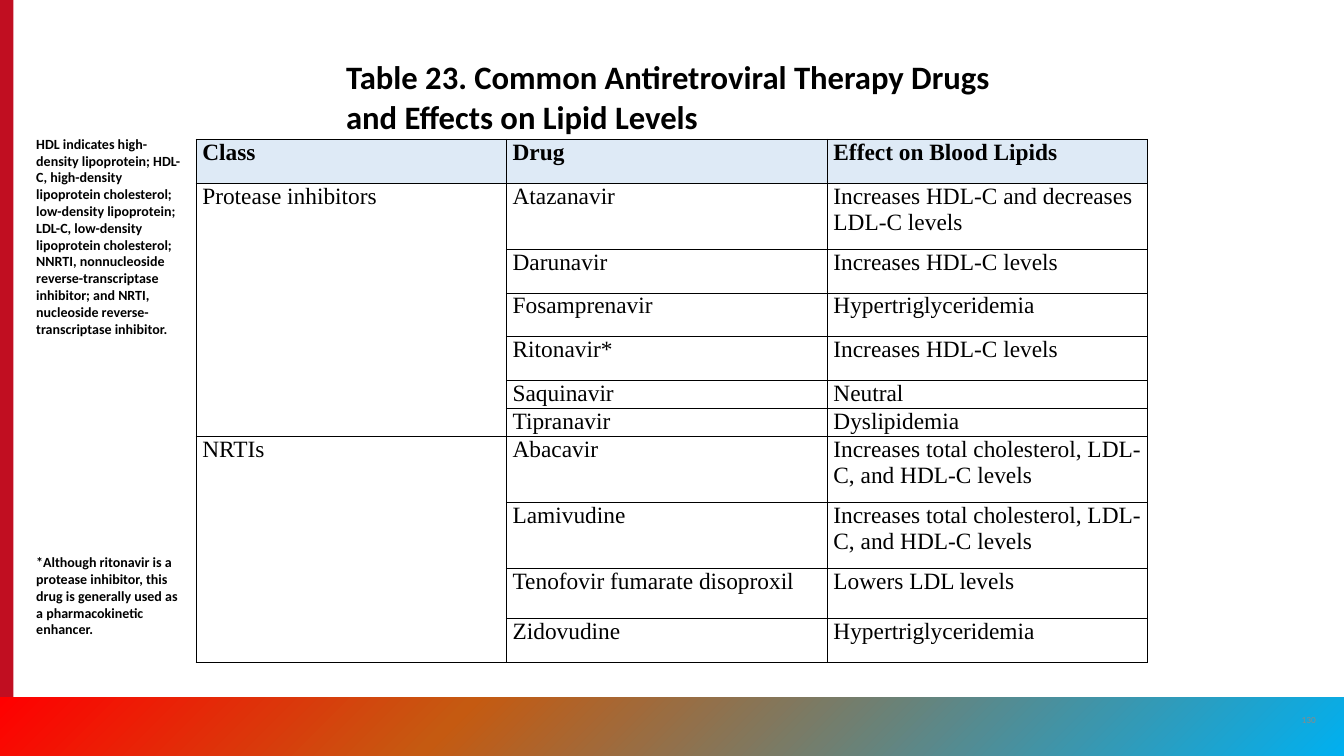
from lxml.etree import SubElement
from pptx import Presentation
from pptx.dml.color import RGBColor
from pptx.enum.shapes import MSO_SHAPE
from pptx.enum.text import MSO_ANCHOR, MSO_AUTO_SIZE, PP_ALIGN
from pptx.oxml import parse_xml
from pptx.oxml.ns import nsdecls, qn
from pptx.util import Pt

COLORS = {"text": "000000", "header": "DEEAF6", "bar": "C10E21", "number": "8A8B8A",
          "blue": "00B0F0", "orange": "C55A11", "red": "FF0000"}
WIDTH, HEIGHT = 1152, 648

TITLE = "Table 23. Common Antiretroviral Therapy Drugs and Effects on Lipid Levels"
ABBREVIATIONS = (
    "HDL indicates high-density lipoprotein; HDL-C, high-density lipoprotein cholesterol; "
    "low-density lipoprotein; LDL-C, low-density lipoprotein cholesterol; NNRTI, nonnucleoside "
    "reverse-transcriptase inhibitor; and NRTI, nucleoside reverse-transcriptase inhibitor.")
FOOTNOTE = ("*Although ritonavir is a protease inhibitor, this drug is generally used as a "
            "pharmacokinetic enhancer.")
HEADINGS = ["Class", "Drug", "Effect on Blood Lipids"]
SHORT, NORMAL, MEDIUM, TALL = 22.4, 37.6, 42.9, 56.5
CLASSES = {
    "Protease inhibitors": [
        ("Atazanavir", "Increases HDL-C and decreases LDL-C levels", TALL),
        ("Darunavir", "Increases HDL-C levels", NORMAL),
        ("Fosamprenavir", "Hypertriglyceridemia", NORMAL),
        ("Ritonavir*", "Increases HDL-C levels", NORMAL),
        ("Saquinavir", "Neutral", SHORT),
        ("Tipranavir", "Dyslipidemia", SHORT),
    ],
    "NRTIs": [
        ("Abacavir", "Increases total cholesterol, LDL-C, and HDL-C levels", TALL),
        ("Lamivudine", "Increases total cholesterol, LDL-C, and HDL-C levels", TALL),
        ("Tenofovir fumarate disoproxil", "Lowers LDL levels", MEDIUM),
        ("Zidovudine", "Hypertriglyceridemia", NORMAL),
    ],
}
COLUMN_WIDTHS = [266, 275, 275]


def write(tf, text, size=12, font="Calibri", color="text", bold=False,
          align=PP_ALIGN.LEFT, anchor=MSO_ANCHOR.TOP):
    tf.word_wrap = True
    tf.vertical_anchor = anchor
    p = tf.paragraphs[0]
    p.alignment = align
    p.line_spacing = 1.0
    r = p.add_run()
    r.text = text
    r.font.size = Pt(size)
    r.font.name = font
    r.font.bold = bold
    r.font.color.rgb = RGBColor.from_string(COLORS[color])


def add_text(s, box, text, **fmt):
    sp = s.shapes.add_textbox(*map(Pt, box))
    write(sp.text_frame, text, **fmt)


def add_rect(s, box):
    sp = s.shapes.add_shape(MSO_SHAPE.RECTANGLE, *map(Pt, box))
    sp.shadow.inherit = False
    sp.line.fill.background()
    return sp


def add_side_bar(s, box):
    sp = add_rect(s, box)
    sp.fill.solid()
    sp.fill.fore_color.rgb = RGBColor.from_string(COLORS["bar"])


def add_footer(s, box, number):
    left, top, width, height = box
    sp = add_rect(s, box)
    sp.rotation = 180
    stops = "".join(
        f'<a:gs pos="{pos * 1000}"><a:srgbClr val="{COLORS[name]}"/></a:gs>'
        for pos, name in [(0, "blue"), (66, "orange"), (100, "red")])
    gradient = parse_xml(f'<a:gradFill {nsdecls("a")}><a:gsLst>{stops}</a:gsLst>'
                         '<a:lin ang="2700000" scaled="0"/></a:gradFill>')
    sp.element.spPr.find(qn("a:prstGeom")).addnext(gradient)
    add_text(s, (left + width - 47.5, top + 2.5, 34.5, 34.5), number, size=8,
             color="number", align=PP_ALIGN.CENTER, anchor=MSO_ANCHOR.MIDDLE)


def add_title(s, box):
    sp = s.shapes.title
    sp.left, sp.top, sp.width, sp.height = map(Pt, box)
    sp.text_frame.auto_size = MSO_AUTO_SIZE.NONE
    write(sp.text_frame, TITLE, size=28, bold=True)


def add_notes_column(s, box):
    left, top, width, height = box
    add_text(s, (left, top, width, 225), ABBREVIATIONS, bold=True)
    add_text(s, (left, top + height - 98, width, 98), FOOTNOTE, bold=True)


def format_cell(cell, filled):
    cell.margin_left = cell.margin_right = Pt(5.4)
    cell.margin_top = cell.margin_bottom = 0
    tcPr = cell._tc.get_or_add_tcPr()
    for side in ("a:lnL", "a:lnR", "a:lnT", "a:lnB"):
        ln = SubElement(tcPr, qn(side), w=str(Pt(1)))
        fill = SubElement(ln, qn("a:solidFill"))
        SubElement(fill, qn("a:srgbClr"), val=COLORS["text"])
    if filled:
        cell.fill.solid()
        cell.fill.fore_color.rgb = RGBColor.from_string(COLORS["header"])
    else:
        cell.fill.background()


def add_drug_table(s, box):
    drugs = [drug for group in CLASSES.values() for drug in group]
    heights = [NORMAL] + [height for _, _, height in drugs]
    table = s.shapes.add_table(len(heights), len(HEADINGS), *map(Pt, box)).table
    table.first_row = table.horz_banding = False
    for column, width in zip(table.columns, COLUMN_WIDTHS):
        column.width = Pt(width)
    for i, height in enumerate(heights):
        table.rows[i].height = Pt(height)
        for j in range(len(HEADINGS)):
            format_cell(table.cell(i, j), filled=i == 0)

    def fill_cell(row, col, text, bold=False):
        write(table.cell(row, col).text_frame, text, size=20,
              font="Times New Roman", bold=bold)

    for j, heading in enumerate(HEADINGS):
        fill_cell(0, j, heading, bold=True)
    row = 1
    for name, group in CLASSES.items():
        table.cell(row, 0).merge(table.cell(row + len(group) - 1, 0))
        fill_cell(row, 0, name)
        for drug, effect, _ in group:
            fill_cell(row, 1, drug)
            fill_cell(row, 2, effect)
            row += 1


def main():
    prs = Presentation()
    prs.slide_width, prs.slide_height = Pt(WIDTH), Pt(HEIGHT)
    s = prs.slides.add_slide(prs.slide_layouts[5])
    add_side_bar(s, (0, 0, 11.5, HEIGHT))
    add_footer(s, (0, 597.6, WIDTH, 50.4), "130")
    add_title(s, (289.5, 45.5, 573, 66))
    add_drug_table(s, (168, 119.5, 816, 445))
    add_notes_column(s, (24, 112.5, 144, 456.5))
    prs.save("out.pptx")


if __name__ == "__main__":
    main()
